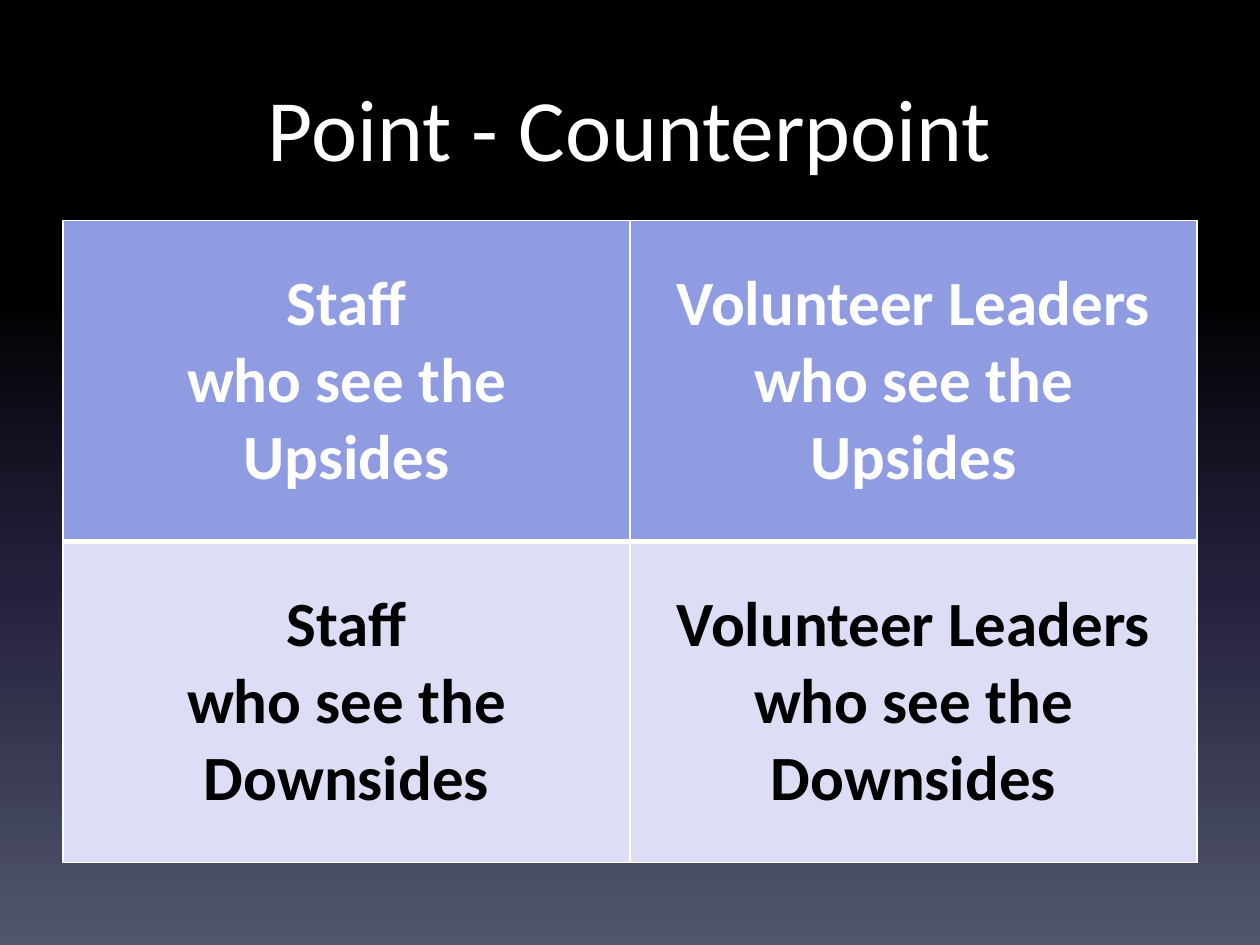
from copy import deepcopy
from dataclasses import dataclass

from lxml import etree
from pptx import Presentation
from pptx.dml.color import RGBColor
from pptx.enum.text import MSO_ANCHOR, PP_ALIGN
from pptx.oxml.ns import qn
from pptx.util import Pt

CENTER = PP_ALIGN.CENTER
TOP, MIDDLE = MSO_ANCHOR.TOP, MSO_ANCHOR.MIDDLE
TITLE_ONLY = 5
FONT = "Calibri"
COLORS = {
    "white": "FFFFFF",
    "black": "000000",
    "night": "24213E",
    "dusk": "51566D",
    "upside": "909CE1",
    "downside": "DBDEF4",
}
BACKGROUND_STOPS = [(0, "black"), (0.31, "black"), (0.62, "night"), (1, "dusk")]
GROUPS = ["Staff", "Volunteer Leaders"]
LEFT, WIDTH = 36, 648
TABLE_TOP, ROW_HEIGHT = 126, 183.4


@dataclass
class View:
    outcome: str
    fill: str
    text: str
    bottom_line: float


VIEWS = [
    View("Upsides", "upside", "white", 3),
    View("Downsides", "downside", "black", 1),
]


def rgb(name: str) -> RGBColor:
    return RGBColor.from_string(COLORS[name])


def format_para(para, size: float, color: str, bold: bool) -> None:
    para.alignment = CENTER
    for name, value in {"name": FONT, "size": Pt(size), "bold": bold}.items():
        setattr(para.font, name, value)
    para.font.color.rgb = rgb(color)


def paint_background(slide) -> None:
    fill = slide.background.fill
    fill.gradient()
    fill.gradient_angle = 270
    stop_list = slide.element.find(".//" + qn("a:gsLst"))
    while len(stop_list) < len(BACKGROUND_STOPS):
        stop_list.append(deepcopy(stop_list[0]))
    for stop, (position, color) in zip(fill.gradient_stops, BACKGROUND_STOPS):
        stop.position = position
        stop.color.rgb = rgb(color)


def add_borders(cell, bottom: float, top: float) -> None:
    properties = cell._tc.get_or_add_tcPr()
    for side, width in {"L": 1, "R": 1, "T": top, "B": bottom}.items():
        line = etree.SubElement(properties, qn(f"a:ln{side}"), w=str(Pt(width)))
        solid = etree.SubElement(line, qn("a:solidFill"))
        etree.SubElement(solid, qn("a:srgbClr"), val=COLORS["white"])


def fill_cell(cell, group: str, view: View, top_line: float) -> None:
    add_borders(cell, view.bottom_line, top_line)
    cell.fill.solid()
    cell.fill.fore_color.rgb = rgb(view.fill)
    cell.vertical_anchor = MIDDLE
    cell.text = "\n".join([group, "who see the", view.outcome])
    for para in cell.text_frame.paragraphs:
        format_para(para, 36, view.text, True)


def add_title(slide, text: str) -> None:
    title = slide.shapes.title
    place = {"left": LEFT, "top": 36, "width": WIDTH, "height": 90}
    for name, value in place.items():
        setattr(title, name, Pt(value))
    frame = title.text_frame
    frame.text = text
    frame.vertical_anchor = TOP
    frame.margin_top = Pt(6.3)
    format_para(frame.paragraphs[0], 50, "white", False)


def add_view_table(slide) -> None:
    table = slide.shapes.add_table(
        len(VIEWS), len(GROUPS), Pt(LEFT), Pt(TABLE_TOP),
        Pt(WIDTH), Pt(ROW_HEIGHT * len(VIEWS)),
    ).table
    top_line = 1
    for row, view in enumerate(VIEWS):
        for column, group in enumerate(GROUPS):
            fill_cell(table.cell(row, column), group, view, top_line)
        # Neighbouring rows share one line
        top_line = view.bottom_line


def main() -> None:
    deck = Presentation()
    deck.slide_width, deck.slide_height = Pt(720), Pt(540)
    slide = deck.slides.add_slide(deck.slide_layouts[TITLE_ONLY])

    # Background and title
    paint_background(slide)
    add_title(slide, "Point - Counterpoint")

    # Two groups against two views
    add_view_table(slide)
    deck.save("out.pptx")


if __name__ == "__main__":
    main()
